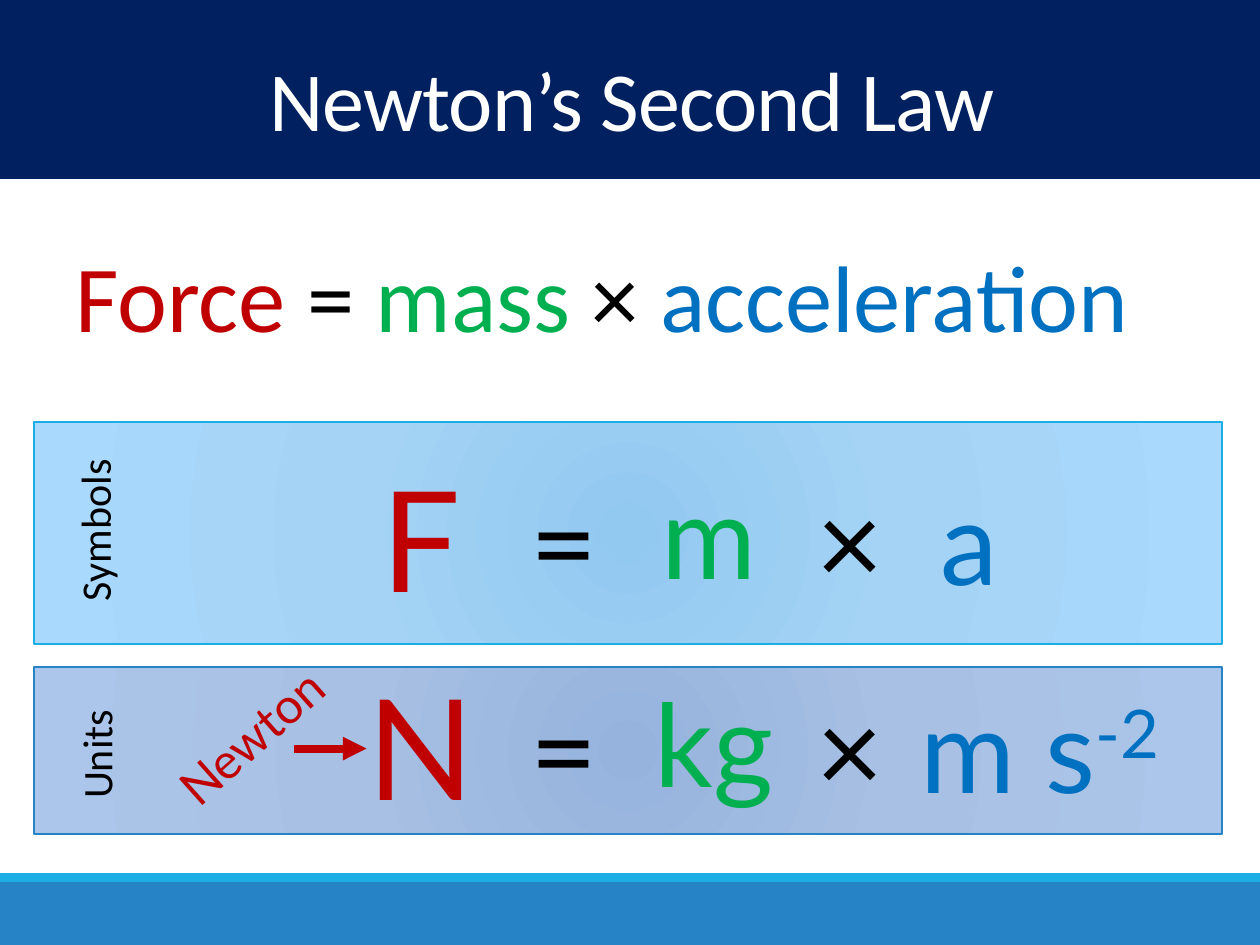
from lxml import etree
from pptx import Presentation
from pptx.dml.color import RGBColor
from pptx.enum.shapes import MSO_CONNECTOR, MSO_SHAPE
from pptx.enum.text import MSO_ANCHOR, MSO_AUTO_SIZE, PP_ALIGN
from pptx.oxml import parse_xml
from pptx.oxml.ns import nsdecls, qn
from pptx.util import Cm, Pt

NAVY = RGBColor(0x00, 0x20, 0x60)
BLUE = RGBColor(0x26, 0x83, 0xC6)
CYAN = RGBColor(0x1C, 0xAD, 0xE4)
WHITE = RGBColor(0xFF, 0xFF, 0xFF)
BLACK = RGBColor(0x00, 0x00, 0x00)
RED = RGBColor(0xC0, 0x00, 0x00)
GREEN = RGBColor(0x00, 0xB0, 0x50)
AZURE = RGBColor(0x00, 0x70, 0xC0)
SYMBOL_STOPS = [RGBColor(0x92, 0xC9, 0xF0), RGBColor(0xA4, 0xD3, 0xF5),
                RGBColor(0xA9, 0xD9, 0xFD)]
UNIT_STOPS = [RGBColor(0x95, 0xB3, 0xDD), RGBColor(0xA7, 0xC0, 0xE3),
              RGBColor(0xAC, 0xC6, 0xEB)]

WIDTH, HEIGHT = 25.4, 19.05
EQUALS_LEFT, TIMES_LEFT, OPERATOR_WIDTH = 10.44, 16.21, 2.11
RESULT_RISE, MASS_RISE = 0.35, 0.12


def add_rect(slide, left, top, width, height, fill=None, line=None):
    s = slide.shapes.add_shape(MSO_SHAPE.RECTANGLE, Cm(left), Cm(top),
                               Cm(width), Cm(height))
    s.shadow.inherit = False
    if fill is not None:
        s.fill.solid()
        s.fill.fore_color.rgb = fill
    if line is None:
        s.line.fill.background()
    else:
        s.line.color.rgb = line
        s.line.width = Pt(1)
    return s


def add_band(slide, top, height, stops, line):
    """Add a full-width panel with a gradient spreading from its centre."""
    s = add_rect(slide, 0.69, top, 23.95, height, line=line)
    gs = "".join(f'<a:gs pos="{pos}"><a:srgbClr val="{color}"/></a:gs>'
                 for pos, color in zip((0, 45000, 100000), stops))
    gradient = parse_xml(
        f'<a:gradFill {nsdecls("a")} rotWithShape="1"><a:gsLst>{gs}</a:gsLst>'
        '<a:path path="circle"><a:fillToRect l="50000" t="50000" '
        'r="50000" b="50000"/></a:path></a:gradFill>')
    s.element.spPr.find(qn("a:prstGeom")).addnext(gradient)


def add_run(p, text, size, color, font, **attributes):
    """Add a run; attributes go straight onto its XML properties."""
    r = p.add_run()
    r.text = text
    r.font.size = Pt(size)
    r.font.name = font
    r.font.color.rgb = color
    for name, value in attributes.items():
        r._r.get_or_add_rPr().set(name, value)


def add_text(slide, left, top, width, height, runs, size, font="Lato",
             wrap=False, rotation=0):
    """Add a text box; runs holds (text, colour) or (text, colour, attributes)."""
    s = slide.shapes.add_textbox(Cm(left), Cm(top), Cm(width), Cm(height))
    s.rotation = rotation
    tf = s.text_frame
    tf.word_wrap = wrap
    tf.auto_size = MSO_AUTO_SIZE.SHAPE_TO_FIT_TEXT
    for text, color, *attributes in runs:
        add_run(tf.paragraphs[0], text, size, color, font,
                **(attributes[0] if attributes else {}))


def add_title(slide, text):
    s = slide.shapes.title
    s.left, s.top, s.width, s.height = Cm(0.08), Cm(1.07), Cm(25.32), Cm(2.13)
    slide.shapes.element.append(s.element)  # in front of the banner
    tf = s.text_frame
    tf.vertical_anchor = MSO_ANCHOR.MIDDLE
    tf.auto_size = MSO_AUTO_SIZE.NONE
    p = tf.paragraphs[0]
    p.alignment = PP_ALIGN.CENTER
    p.line_spacing = 0.85
    add_run(p, text, 48, WHITE, "Calibri", spc="-50")


def add_arrow(slide, x1, x2, y):
    c = slide.shapes.add_connector(MSO_CONNECTOR.STRAIGHT, Cm(x1), Cm(y),
                                   Cm(x2), Cm(y))
    c.line.color.rgb = RED
    c.line.width = Pt(4.5)
    props = c.element.spPr
    etree.SubElement(props.find(qn("a:ln")), qn("a:tailEnd"), type="triangle")
    etree.SubElement(props, qn("a:effectLst"))


def add_formula(slide, top, result, mass, acceleration):
    """Add one row; each term is (left, width, runs)."""
    for (left, width, runs), rise, height, size in (
            (result, RESULT_RISE, 3.68, 80),
            (mass, MASS_RISE, 3.07, 66),
            (acceleration, 0, 3.07, 66)):
        add_text(slide, left, top - rise, width, height, runs, size)
    for left, sign in ((EQUALS_LEFT, "="), (TIMES_LEFT, "×")):
        add_text(slide, left, top, OPERATOR_WIDTH, 3.07, [(sign, BLACK)], 66)


def main():
    prs = Presentation()
    prs.slide_width, prs.slide_height = Cm(WIDTH), Cm(HEIGHT)
    slide = prs.slides.add_slide(prs.slide_layouts[5])

    add_rect(slide, 0, 17.78, WIDTH, 1.27, BLUE)
    add_rect(slide, 0, 17.6, WIDTH, 0.18, CYAN)
    add_band(slide, 13.44, 3.38, UNIT_STOPS, BLUE)
    add_band(slide, 8.51, 4.47, SYMBOL_STOPS, CYAN)
    add_rect(slide, 0, 0, WIDTH, 3.61, NAVY)
    add_title(slide, "Newton’s Second Law")

    add_text(slide, 1.27, 4.67, 23.37, 2.57,
             [("Force ", RED), ("= ", BLACK), ("mass", GREEN),
              (" × ", BLACK), ("acceleration", AZURE)],
             54, "Calibri", wrap=True)
    for label, left, top, width in (("Symbols", 0.2, 10.03, 3.4),
                                    ("Units", 0.76, 14.55, 2.34)):
        add_text(slide, left, top, width, 1.27, [(label, BLACK)], 24,
                 "Calibri", rotation=270)

    add_formula(slide, 9.35, (7.44, 1.9, [("F", RED)]),
                (13.08, 2.54, [("m", GREEN)]), (18.72, 1.7, [("a", AZURE)]))
    add_formula(slide, 13.54, (7.16, 2.64, [("N", RED)]),
                (12.95, 3.07, [("kg", GREEN)]),
                (18.31, 5.66, [("m s", AZURE),
                               ("-2", AZURE, {"baseline": "30000"})]))

    add_text(slide, 3.07, 14.12, 3.99, 1.45, [("Newton", RED)], 28,
             rotation=318.3)
    add_arrow(slide, 5.92, 7.39, 15.09)
    prs.save("out.pptx")


if __name__ == "__main__":
    main()
